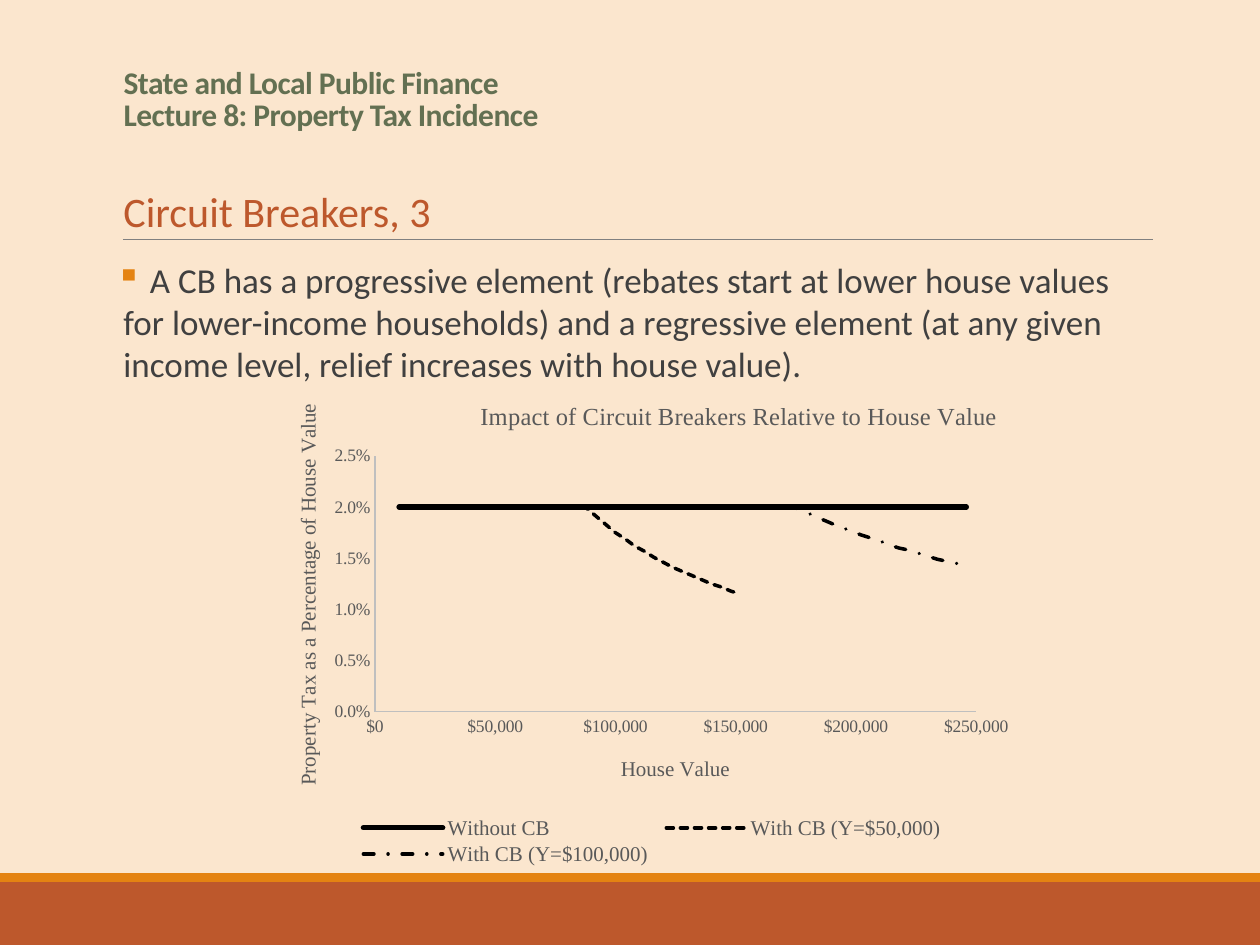
import lxml.etree
import pptx
import pptx.chart.data
import pptx.dml.color
import pptx.enum.chart
import pptx.enum.dml
import pptx.enum.shapes
import pptx.enum.text
import pptx.oxml.ns
import pptx.util

PX = pptx.util.Inches(1) / 126
RGBColor = pptx.dml.color.RGBColor
CREAM = RGBColor(0xFB, 0xE6, 0xCE)
RUST = RGBColor(0xBD, 0x58, 0x2C)
ORANGE = RGBColor(0xE4, 0x83, 0x12)
GREEN = RGBColor(0x63, 0x70, 0x52)
RULE_GRAY = RGBColor(0x80, 0x80, 0x80)
AXIS_GRAY = RGBColor(0xBF, 0xBF, 0xBF)
CHART_GRAY = RGBColor(0x59, 0x59, 0x59)
BODY_GRAY = RGBColor(0x40, 0x40, 0x40)
BLACK = RGBColor(0, 0, 0)
SANS = "Calibri"
SERIF = "Times New Roman"

HOUSE_VALUES = [10000, *range(80000, 152001, 4000),
                *range(123000, 155001, 4000), *range(158000, 246001, 4000)]
RATES_50 = [0.02, 0.02, 0.0199, 0.0191, 0.0183, 0.0175, 0.0169, 0.0162, 0.0157,
            0.0151, 0.0146, 0.0141, 0.0137, 0.0133, 0.0129, 0.0125, 0.0122,
            0.0118, 0.0115]
RATES_100 = [0.02] * 14 + [
    0.0197, 0.0192, 0.0188, 0.0184, 0.018, 0.0177, 0.0173, 0.017, 0.0167,
    0.0163, 0.016, 0.0158, 0.0155, 0.0152, 0.0149, 0.0147, 0.0145, 0.0142]
DASH = pptx.enum.dml.MSO_LINE
SERIES = [
    ("Without CB", [0.02] * 52, 3, DASH.SOLID),
    ("With CB (Y=$50,000)", [None] + RATES_50 + [None] * 32, 2, DASH.SQUARE_DOT),
    ("With CB (Y=$100,000)", [None] * 20 + RATES_100, 2, DASH.DASH_DOT),
]


def emu(*lengths):
    return [round(length * PX) for length in lengths]


def set_font(font, name, size, color, bold=False):
    font.name = name
    font.size = pptx.util.Pt(size)
    font.color.rgb = color
    font.bold = bold


def add_child(parent, tag, **attributes):
    child = lxml.etree.SubElement(parent, pptx.oxml.ns.qn(tag))
    for key, value in attributes.items():
        child.set(key, str(value))
    return child


def add_band(slide, box, color):
    shape = slide.shapes.add_shape(
        pptx.enum.shapes.MSO_SHAPE.RECTANGLE, *emu(*box))
    shape.shadow.inherit = False
    shape.fill.solid()
    shape.fill.fore_color.rgb = color
    shape.line.fill.background()


def add_frame(slide):
    add_band(slide, (0, 882, 1260, 63), RUST)
    add_band(slide, (0, 873, 1260, 9), ORANGE)
    rule = slide.shapes.add_connector(
        pptx.enum.shapes.MSO_CONNECTOR.STRAIGHT, *emu(123, 239, 1153, 239))
    rule.line.color.rgb = RULE_GRAY
    rule.line.width = pptx.util.Pt(0.5)
    add_child(rule._element.spPr, "a:effectLst")


def add_title(slide, box):
    title = slide.shapes.title
    title.left, title.top, title.width, title.height = emu(*box)
    frame = title.text_frame
    frame.text = "State and Local Public Finance\vLecture 8: Property Tax Incidence"
    frame.vertical_anchor = pptx.enum.text.MSO_ANCHOR.BOTTOM
    frame.auto_size = pptx.enum.text.MSO_AUTO_SIZE.NONE
    paragraph = frame.paragraphs[0]
    paragraph.alignment = pptx.enum.text.PP_ALIGN.LEFT
    paragraph.line_spacing = 0.85
    for run in paragraph.runs:
        set_font(run.font, SANS, 18, GREEN, True)
        run.font._element.set("spc", "-30")


def add_heading(slide, box):
    frame = slide.shapes.add_textbox(*emu(*box)).text_frame
    frame.text = "Circuit Breakers, 3"
    frame.word_wrap = False
    set_font(frame.paragraphs[0].runs[0].font, SANS, 24, RUST)


def add_body(slide, box):
    frame = slide.shapes.add_textbox(*emu(*box)).text_frame
    frame.word_wrap = True
    frame.margin_left = frame.margin_right = 0
    paragraph = frame.paragraphs[0]
    paragraph.text = (
        " A CB has a progressive element (rebates start at lower house values for "
        "lower-income households) and a regressive element (at any given income "
        "level, relief increases with house value).")
    paragraph.space_before = pptx.util.Pt(6.8)
    paragraph.space_after = pptx.util.Pt(1.1)
    set_font(paragraph.runs[0].font, SANS, 20, BODY_GRAY)
    properties = paragraph._p.get_or_add_pPr()
    indent = pptx.util.Inches(0.06)
    properties.set("marL", str(indent))
    properties.set("indent", str(-indent))
    bullet_color = add_child(properties, "a:buClr")
    add_child(bullet_color, "a:srgbClr", val=ORANGE)
    add_child(properties, "a:buChar", char="▪")


def place_part(element, index, chart_box, left, top, size=None, target=None):
    for layout in element.findall(pptx.oxml.ns.qn("c:layout")):
        element.remove(layout)
    layout = lxml.etree.Element(pptx.oxml.ns.qn("c:layout"))
    element.insert(index, layout)
    manual = add_child(layout, "c:manualLayout")
    if target:
        add_child(manual, "c:layoutTarget", val=target)
    add_child(manual, "c:xMode", val="edge")
    add_child(manual, "c:yMode", val="edge")
    values = zip("xywh", (left, top, *(size or ())), chart_box[2:] * 2)
    for name, length, whole in values:
        add_child(manual, "c:" + name, val=round(length / whole, 4))


def format_title(title, text, size, chart_box, left, top):
    title.text_frame.text = text
    set_font(title.text_frame.paragraphs[0].runs[0].font, SERIF, size, CHART_GRAY)
    place_part(title._element, 1, chart_box, left, top)


def format_axis(axis, number_format):
    axis.has_major_gridlines = False
    axis.major_tick_mark = pptx.enum.chart.XL_TICK_MARK.NONE
    axis.minor_tick_mark = pptx.enum.chart.XL_TICK_MARK.NONE
    axis.format.line.color.rgb = AXIS_GRAY
    axis.format.line.width = pptx.util.Pt(0.75)
    axis.tick_labels.number_format = number_format
    axis.tick_labels.number_format_is_linked = False
    set_font(axis.tick_labels.font, SERIF, 10, CHART_GRAY)


def add_rate_chart(slide, box):
    data = pptx.chart.data.XyChartData()
    for name, rates, _, _ in SERIES:
        series = data.add_series(name)
        for house_value, rate in zip(HOUSE_VALUES, rates):
            series.add_data_point(house_value, rate)
    chart = slide.shapes.add_chart(
        pptx.enum.chart.XL_CHART_TYPE.XY_SCATTER_LINES_NO_MARKERS,
        *emu(*box), data).chart
    set_font(chart.font, SANS, 10, BLACK)
    chart.plots[0].vary_by_categories = False
    for series, (_, _, width, dash) in zip(chart.plots[0].series, SERIES):
        series.smooth = False
        line = series.format.line
        line.color.rgb = BLACK
        line.width = pptx.util.Pt(width)
        line.dash_style = dash
        series._element.spPr.find(pptx.oxml.ns.qn("a:ln")).set("cap", "rnd")

    format_axis(chart.category_axis, '"$"#,##0')
    format_axis(chart.value_axis, "0.0%")
    chart.category_axis.maximum_scale = 250000
    chart.has_title = True
    format_title(chart.chart_title,
                 "Impact of Circuit Breakers Relative to House Value",
                 14, box, 214, 17)
    format_title(chart.category_axis.axis_title, "House Value", 12, box, 355, 373)
    format_title(chart.value_axis.axis_title,
                 "Property Tax as a Percentage of House Value", 12, box, 29, 21)
    body = chart.value_axis.axis_title.text_frame._txBody.bodyPr
    body.set("rot", "-5400000")
    body.set("vert", "horz")

    chart.has_legend = True
    chart.legend.position = pptx.enum.chart.XL_LEGEND_POSITION.BOTTOM
    chart.legend.include_in_layout = False
    set_font(chart.legend.font, SERIF, 12, CHART_GRAY)
    place_part(chart.legend._element, 1, box, 90, 434, (600, 56))
    plot_area = chart._chartSpace.chart.plotArea
    place_part(plot_area, 0, box, 113, 77, (601, 256), "inner")


def main():
    presentation = pptx.Presentation()
    presentation.slide_width, presentation.slide_height = emu(1260, 945)
    slide = presentation.slides.add_slide(presentation.slide_layouts[5])
    slide.background.fill.solid()
    slide.background.fill.fore_color.rgb = CREAM
    add_frame(slide)
    add_title(slide, (111, 42, 1040, 97))
    add_heading(slide, (111, 179, 335, 63))
    add_body(slide, (116, 252, 1031, 620))
    add_rate_chart(slide, (262, 379, 761, 491))
    presentation.save("out.pptx")


if __name__ == "__main__":
    main()
